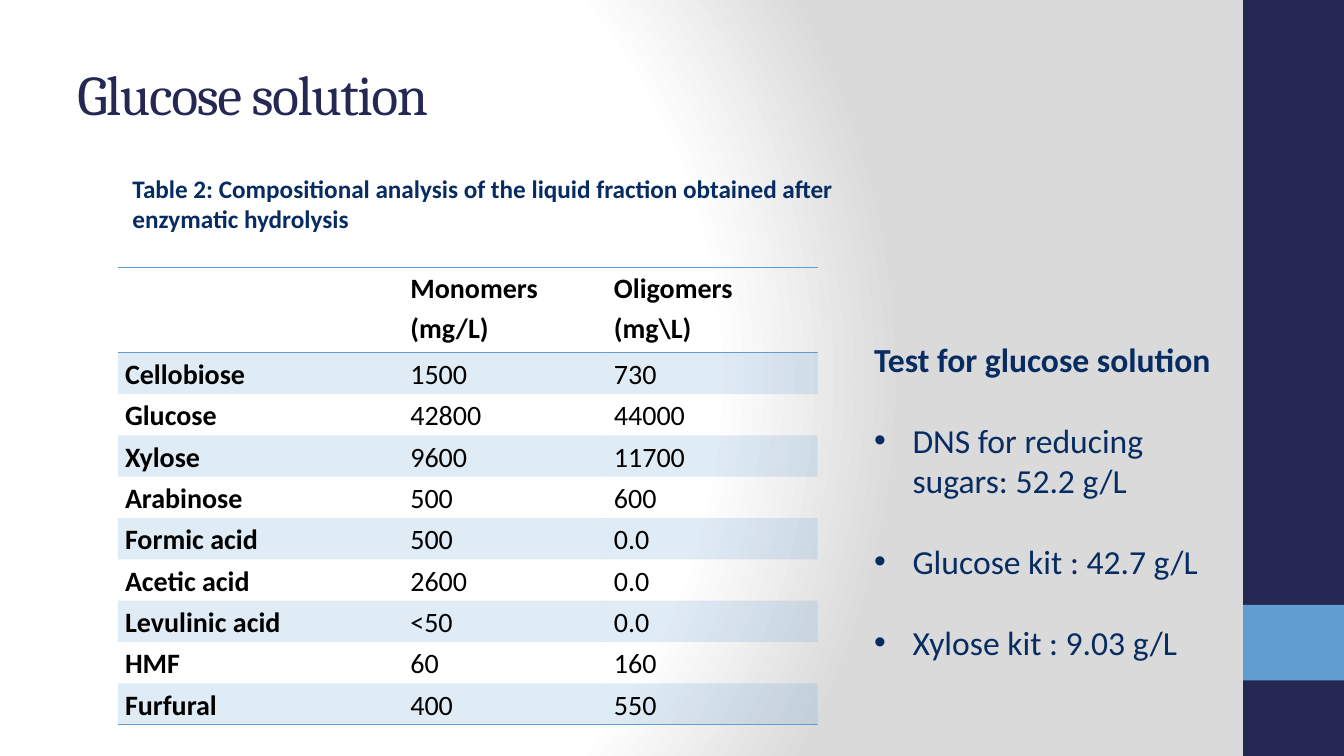
from dataclasses import dataclass

from lxml import etree
from pptx import Presentation
from pptx.dml.color import RGBColor
from pptx.enum.shapes import MSO_SHAPE
from pptx.enum.text import MSO_ANCHOR, PP_ALIGN
from pptx.oxml import parse_xml
from pptx.oxml.ns import nsdecls, qn
from pptx.util import Inches, Pt

RECTANGLE = MSO_SHAPE.RECTANGLE
ROUNDED = MSO_SHAPE.ROUNDED_RECTANGLE
MIDDLE = MSO_ANCHOR.MIDDLE
LEFT = PP_ALIGN.LEFT
NO_STYLE_NO_GRID = "{2D5ABB26-0587-4C30-8999-92F81FD0307C}"


@dataclass(frozen=True)
class Theme:
    navy: str = "242852"
    sky: str = "629DD1"
    ink: str = "072C62"
    black: str = "000000"
    white: str = "FFFFFF"
    grey: str = "DADADA"
    heading_font: str = "Cambria"
    body_font: str = "Calibri"
    title_size: int = 40
    panel_size: int = 24
    table_size: int = 20
    caption_size: int = 18
    band_alpha: int = 20


class SlideBuilder:
    def __init__(self, slide, theme):
        self.slide = slide
        self.theme = theme

    def background(self):
        """Radial gradient, white to grey."""
        theme = self.theme
        self.slide.background.fill.solid()
        properties = self.slide.element.find(".//" + qn("p:bgPr"))
        stops = "".join(
            f'<a:gs pos="{position * 1000}"><a:srgbClr val="{color}"/></a:gs>'
            for position, color in ((0, theme.white), (75, theme.white), (100, theme.grey)))
        properties.replace(properties[0], parse_xml(
            f'<a:gradFill {nsdecls("a")} rotWithShape="1"><a:gsLst>{stops}</a:gsLst>'
            '<a:path path="circle"><a:fillToRect l="20000" t="50000" r="100000" b="50000"/>'
            '</a:path></a:gradFill>'))

    def format_text(self, paragraph, size, color, bold=False, font=None):
        for run in paragraph.runs:
            run.font.name = font or self.theme.body_font
            run.font.size = Pt(size)
            run.font.bold = bold
            run.font.color.rgb = RGBColor.from_string(color)

    def block(self, left, top, width, height, color):
        bar = self.slide.shapes.add_shape(
            RECTANGLE, Inches(left), Inches(top), Inches(width), Inches(height))
        bar.shadow.inherit = False
        bar.fill.solid()
        bar.fill.fore_color.rgb = RGBColor.from_string(color)
        bar.line.fill.background()

    def title(self, text, left, top, width, height):
        box = self.slide.shapes.add_textbox(
            Inches(left), Inches(top), Inches(width), Inches(height))
        frame = box.text_frame
        frame.word_wrap = True
        frame.vertical_anchor = MIDDLE
        frame.text = text
        heading = frame.paragraphs[0]
        self.format_text(heading, self.theme.title_size, self.theme.navy,
                         font=self.theme.heading_font)
        heading.runs[0].font._element.set("spc", "-100")

    def panel(self, text, left, top, width, height, size):
        """Unfilled rounded panel with a bold first paragraph."""
        shape = self.slide.shapes.add_shape(
            ROUNDED, Inches(left), Inches(top), Inches(width), Inches(height))
        shape.shadow.inherit = False
        shape.fill.background()
        shape.line.fill.background()
        frame = shape.text_frame
        frame.word_wrap = True
        frame.vertical_anchor = MIDDLE
        frame.text = text
        for index, paragraph in enumerate(frame.paragraphs):
            paragraph.alignment = LEFT
            self.format_text(paragraph, size, self.theme.ink, bold=index == 0)
        return frame

    def bullet(self, paragraph, indent, gap):
        paragraph.space_before = Pt(gap)
        properties = paragraph._p.get_or_add_pPr()
        properties.set("marL", str(Inches(indent)))
        properties.set("indent", str(-Inches(indent)))
        etree.SubElement(properties, qn("a:buFont")).set("typeface", "Arial")
        etree.SubElement(properties, qn("a:buChar")).set("char", "•")

    def cell_border(self, cell, sides):
        properties = cell._tc.get_or_add_tcPr()
        for index, side in enumerate(sides):
            properties.insert(index, parse_xml(
                f'<a:ln{side} {nsdecls("a")} w="{Pt(1)}"><a:solidFill>'
                f'<a:srgbClr val="{self.theme.sky}"/></a:solidFill></a:ln{side}>'))

    def cell_band(self, cell):
        cell.fill.solid()
        cell.fill.fore_color.rgb = RGBColor.from_string(self.theme.sky)
        color = cell._tc.tcPr.find(".//" + qn("a:srgbClr"))
        etree.SubElement(color, qn("a:alpha")).set("val", str(self.theme.band_alpha * 1000))

    def table(self, rows, left, top, widths, header_height, row_height):
        last = len(rows) - 1
        frame = self.slide.shapes.add_table(
            len(rows), len(widths), Inches(left), Inches(top), Inches(sum(widths)),
            Inches(header_height + last * row_height))
        frame.element.find(".//" + qn("a:tableStyleId")).text = NO_STYLE_NO_GRID
        table = frame.table
        for column, width in zip(table.columns, widths):
            column.width = Inches(width)
        for r, values in enumerate(rows):
            table.rows[r].height = Inches(row_height if r else header_height)
            for c, value in enumerate(values):
                cell = table.cell(r, c)
                cell.margin_left = cell.margin_right = Inches(0.07)
                cell.margin_top = cell.margin_bottom = 0
                cell.text_frame.text = value
                paragraph = cell.text_frame.paragraphs[0]
                paragraph.line_spacing = 1.15
                self.format_text(paragraph, self.theme.table_size, self.theme.black,
                                 bold=r == 0 or c == 0)
                if r % 2:
                    self.cell_band(cell)
                else:
                    cell.fill.background()
                if r == 0:
                    self.cell_border(cell, "TB")
                elif r == last:
                    self.cell_border(cell, "B")


COMPOSITION = [
    ("", "Monomers (mg/L)", "Oligomers (mg\\L)"),
    ("Cellobiose", "1500", "730"),
    ("Glucose", "42800", "44000"),
    ("Xylose", "9600", "11700"),
    ("Arabinose", "500", "600"),
    ("Formic acid", "500", "0.0"),
    ("Acetic acid", "2600", "0.0"),
    ("Levulinic acid", "<50", "0.0"),
    ("HMF", "60", "160"),
    ("Furfural", "400", "550"),
]
CAPTION = ("Table 2: Compositional analysis of the liquid fraction "
           "obtained after enzymatic hydrolysis")
TESTS = [
    "Test for glucose solution",
    "DNS for reducing sugars: 52.2 g/L",
    "Glucose kit : 42.7 g/L",
    "Xylose kit : 9.03 g/L",
]


def main():
    presentation = Presentation()
    presentation.slide_width = Inches(13.33)
    presentation.slide_height = Inches(7.5)
    theme = Theme()
    builder = SlideBuilder(
        presentation.slides.add_slide(presentation.slide_layouts[6]), theme)

    # Background and side bar
    builder.background()
    builder.block(12.33, 0, 1, 7.5, theme.navy)
    builder.block(12.33, 6, 1, 0.75, theme.sky)

    # Title, table and caption
    builder.title("Glucose solution", 0.67, 0.3, 11.11, 1.25)
    builder.table(COMPOSITION, 1.17, 2.65, (2.83, 2.02, 2.09), 0.85, 0.41)
    builder.panel(CAPTION, 1.17, 1.55, 8.21, 0.93, theme.caption_size)

    # Test results
    tests = builder.panel("\n".join(TESTS), 8.37, 2.25, 4.15, 5.13, theme.panel_size)
    tests.margin_top = Inches(0.35)
    for result in tests.paragraphs[1:]:
        builder.bullet(result, 0.38, 29)

    presentation.save("out.pptx")


if __name__ == "__main__":
    main()
